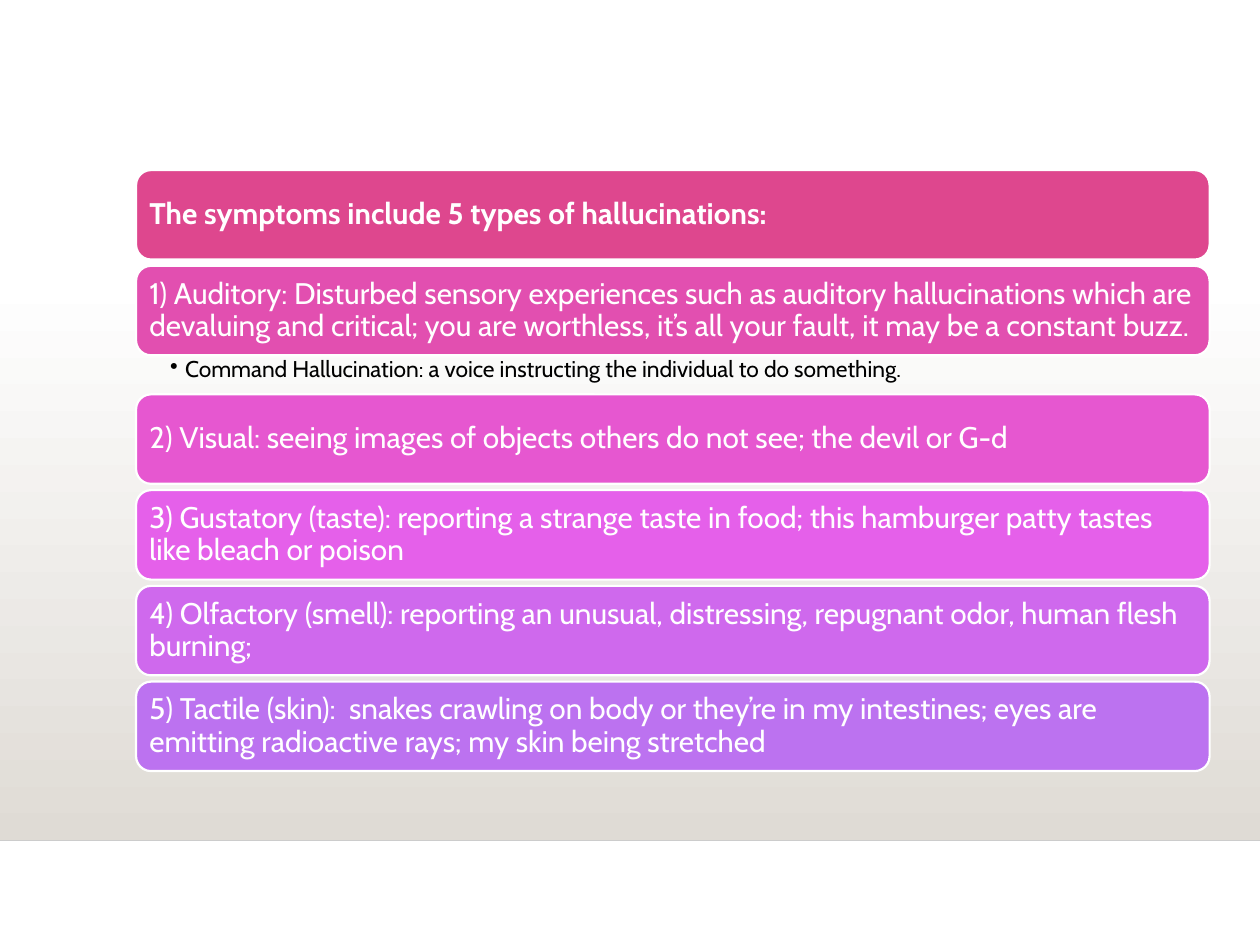
from lxml import etree
from pptx import Presentation
from pptx.dml.color import RGBColor
from pptx.enum.shapes import MSO_CONNECTOR, MSO_SHAPE
from pptx.enum.text import MSO_ANCHOR, PP_ALIGN
from pptx.oxml.ns import qn
from pptx.util import Inches, Pt

RECTANGLE = MSO_SHAPE.RECTANGLE
ROUNDED = MSO_SHAPE.ROUNDED_RECTANGLE
STRAIGHT = MSO_CONNECTOR.STRAIGHT
MIDDLE, TOP = MSO_ANCHOR.MIDDLE, MSO_ANCHOR.TOP
LEFT = PP_ALIGN.LEFT

FONT = "Cabin"
BANDS = [
    ("The symptoms include 5 types of hallucinations:", "DE478E", None),
    ("1) Auditory: Disturbed sensory experiences such as auditory hallucinations which are "
     "devaluing and critical; you are worthless, it’s all your fault, it may be a constant buzz.",
     "E24FB0",
     "Command Hallucination: a voice instructing the individual to do something."),
    ("2) Visual: seeing images of objects others do not see; the devil or G-d", "E657D0", None),
    ("3) Gustatory (taste): reporting a strange taste in food; this hamburger patty tastes "
     "like bleach or poison", "E560EA", None),
    ("4) Olfactory (smell): reporting an unusual, distressing, repugnant odor, human flesh "
     "burning;", "CF69ED", None),
    ("5) Tactile (skin):  snakes crawling on body or they’re in my intestines; eyes are "
     "emitting radioactive rays; my skin being stretched", "BC72F0", None),
]
BAND_LEFT, BAND_TOP, BAND_WIDTH, BAND_HEIGHT = 1.08, 1.35, 8.52, 0.71
GAP, NOTE_HEIGHT = 0.05, 0.31
FLOOR_TOP, FLOOR_BOTTOM = 2.2, 6.67


def color(hex_value):
    """Return the colour for a hex string."""
    return RGBColor.from_string(hex_value)


def write(shape, text, size, hex_value, anchor, insets, bold=False):
    """Fill a shape with one left-aligned paragraph and return it."""
    frame = shape.text_frame
    frame.word_wrap = True
    frame.vertical_anchor = anchor
    frame.margin_left, frame.margin_top, frame.margin_right, frame.margin_bottom = map(Inches, insets)
    frame.text = text
    paragraph = frame.paragraphs[0]
    paragraph.alignment = LEFT
    paragraph.line_spacing = 0.9
    font = paragraph.runs[0].font
    font.name, font.size, font.bold = FONT, Pt(size), bold
    font.color.rgb = color(hex_value)
    return paragraph


def add_floor(slide, width):
    """Draw the shaded lower backdrop and its edge line."""
    floor = slide.shapes.add_shape(
        RECTANGLE, 0, Inches(FLOOR_TOP), width, Inches(FLOOR_BOTTOM - FLOOR_TOP))
    floor.shadow.inherit = False
    floor.line.fill.background()
    floor.fill.gradient()
    floor.fill.gradient_angle = 270
    for stop, hex_value in zip(floor.fill.gradient_stops, ("FFFFFF", "DFDBD5")):
        stop.color.rgb = color(hex_value)
    edge = slide.shapes.add_connector(
        STRAIGHT, 0, Inches(FLOOR_BOTTOM), width, Inches(FLOOR_BOTTOM))
    edge.line.color.rgb = color("CCCCCC")
    edge.line.width = Pt(1)
    etree.SubElement(edge._element.spPr, qn("a:effectLst"))


def add_band(slide, top, text, fill, bold):
    """Draw one coloured band with its text."""
    band = slide.shapes.add_shape(
        ROUNDED, Inches(BAND_LEFT), Inches(top), Inches(BAND_WIDTH), Inches(BAND_HEIGHT))
    band.shadow.inherit = False
    band.fill.solid()
    band.fill.fore_color.rgb = color(fill)
    band.line.color.rgb = color("FFFFFF")
    band.line.width = Pt(1.25)
    write(band, text, 17, "FFFFFF", MIDDLE, (0.07, 0.07, 0.07, 0.07), bold)


def add_note(slide, top, text):
    """Write a bulleted note below a band."""
    note = slide.shapes.add_textbox(
        Inches(BAND_LEFT), Inches(top), Inches(BAND_WIDTH), Inches(NOTE_HEIGHT))
    paragraph = write(note, text, 13, "000000", TOP, (0.27, 0.02, 0.13, 0.02))
    properties = paragraph._p.get_or_add_pPr()
    properties.set("marL", str(Inches(0.12)))
    properties.set("indent", str(-Inches(0.12)))
    etree.SubElement(properties, qn("a:buChar"), char="•")


def main():
    """Build and save the slide."""
    presentation = Presentation()
    presentation.slide_width, presentation.slide_height = Inches(10), Inches(7.5)
    slide = presentation.slides.add_slide(presentation.slide_layouts[6])
    add_floor(slide, presentation.slide_width)
    top = BAND_TOP
    for index, (text, fill, note) in enumerate(BANDS):
        add_band(slide, top, text, fill, index == 0)
        top += BAND_HEIGHT
        if note:
            add_note(slide, top, note)
            top += NOTE_HEIGHT
        else:
            top += GAP
    presentation.save("out.pptx")


if __name__ == "__main__":
    main()
